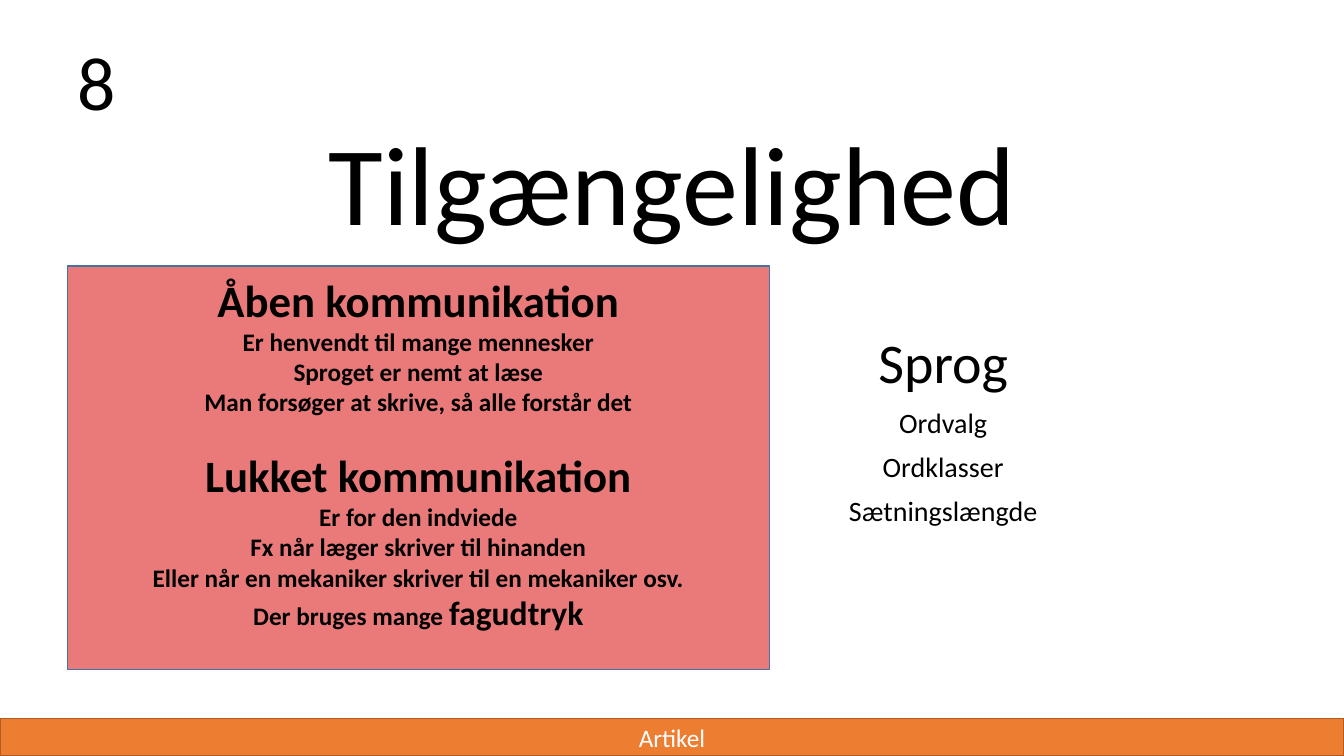
from pptx import Presentation
from pptx.dml.color import RGBColor
from pptx.enum import shapes, text
from pptx.util import Inches, Pt

BLACK = RGBColor(0x00, 0x00, 0x00)
WHITE = RGBColor(0xFF, 0xFF, 0xFF)
ORANGE = RGBColor(0xED, 0x7D, 0x31)
BROWN = RGBColor(0xAF, 0x5C, 0x24)
RED = RGBColor(0xEA, 0x7A, 0x7A)
BLUE = RGBColor(0x43, 0x73, 0x9E)
FONT = "Calibri"

OPEN = ("Åben kommunikation", [
    "Er henvendt til mange mennesker",
    "Sproget er nemt at læse",
    "Man forsøger at skrive, så alle forstår det",
])
CLOSED = ("Lukket kommunikation", [
    "Er for den indviede",
    "Fx når læger skriver til hinanden",
    "Eller når en mekaniker skriver til en mekaniker osv.",
    "Der bruges mange ",
])


def place(sp, left, top, width, height):
    sp.left, sp.top = Inches(left), Inches(top)
    sp.width, sp.height = Inches(width), Inches(height)


def format_run(r, size, color=BLACK, bold=False):
    r.font.name = FONT
    r.font.size = Pt(size)
    r.font.color.rgb = color
    r.font.bold = bold


def write_lines(tf, lines, color=BLACK, bold=False, align=text.PP_ALIGN.CENTER):
    """Write one paragraph for each (words, size) pair."""
    for i, (words, size) in enumerate(lines):
        p = tf.add_paragraph() if i else tf.paragraphs[0]
        p.text = words
        p.alignment = align
        format_run(p.runs[0], size, color, bold)


def fill_placeholder(sp, box, lines, anchor, space_before):
    place(sp, *box)
    tf = sp.text_frame
    tf.auto_size = text.MSO_AUTO_SIZE.NONE
    tf.vertical_anchor = anchor
    write_lines(tf, lines)
    for p in tf.paragraphs:
        p.line_spacing = 0.9
        p.space_before = Pt(space_before)


def add_panel(slide, box, fill, line, lines, color, bold=False):
    sp = slide.shapes.add_shape(shapes.MSO_SHAPE.RECTANGLE,
                                *(Inches(n) for n in box))
    sp.shadow.inherit = False
    sp.fill.solid()
    sp.fill.fore_color.rgb = fill
    sp.line.color.rgb = line
    sp.line.width = Pt(1)
    tf = sp.text_frame
    tf.word_wrap = True
    tf.vertical_anchor = text.MSO_ANCHOR.MIDDLE
    write_lines(tf, lines, color, bold)
    return tf


def add_number(slide, words):
    sp = slide.shapes.add_textbox(Inches(0.67), Inches(0.3),
                                  Inches(0.59), Inches(1.01))
    tf = sp.text_frame
    tf.word_wrap = False
    tf.auto_size = text.MSO_AUTO_SIZE.SHAPE_TO_FIT_TEXT
    write_lines(tf, [(words, 54)], align=text.PP_ALIGN.LEFT)


def main():
    prs = Presentation()
    prs.slide_width, prs.slide_height = Inches(13.33), Inches(7.5)
    slide = prs.slides.add_slide(prs.slide_layouts[0])

    # Title and language list
    fill_placeholder(slide.shapes.title, (1.67, 1.23, 10, 1.31),
                     [("Tilgængelighed", 80)], text.MSO_ANCHOR.TOP, 0)
    topics = ["Ordvalg", "Ordklasser", "Sætningslængde"]
    fill_placeholder(slide.placeholders[1], (7.05, 2.75, 4.61, 3.06),
                     [("Sprog", 40)] + [(topic, 20) for topic in topics],
                     text.MSO_ANCHOR.MIDDLE, 10)

    # Number and footer bar
    add_number(slide, "8")
    add_panel(slide, (0, 7.13, 13.33, 0.37), ORANGE, BROWN,
              [("Artikel", 18)], WHITE)

    # Open and closed communication
    lines = []
    for heading, points in (OPEN, CLOSED):
        lines.append((heading, 32))
        lines += [(point, 18) for point in points]
    tf = add_panel(slide, (0.67, 2.64, 6.96, 4), RED, BLUE, lines, BLACK, True)
    tf.margin_bottom = Inches(0.35)
    tf.paragraphs[1 + len(OPEN[1])].space_before = Pt(22)
    r = tf.paragraphs[-1].add_run()
    r.text = "fagudtryk"
    format_run(r, 24, bold=True)

    prs.save("out.pptx")


if __name__ == "__main__":
    main()
